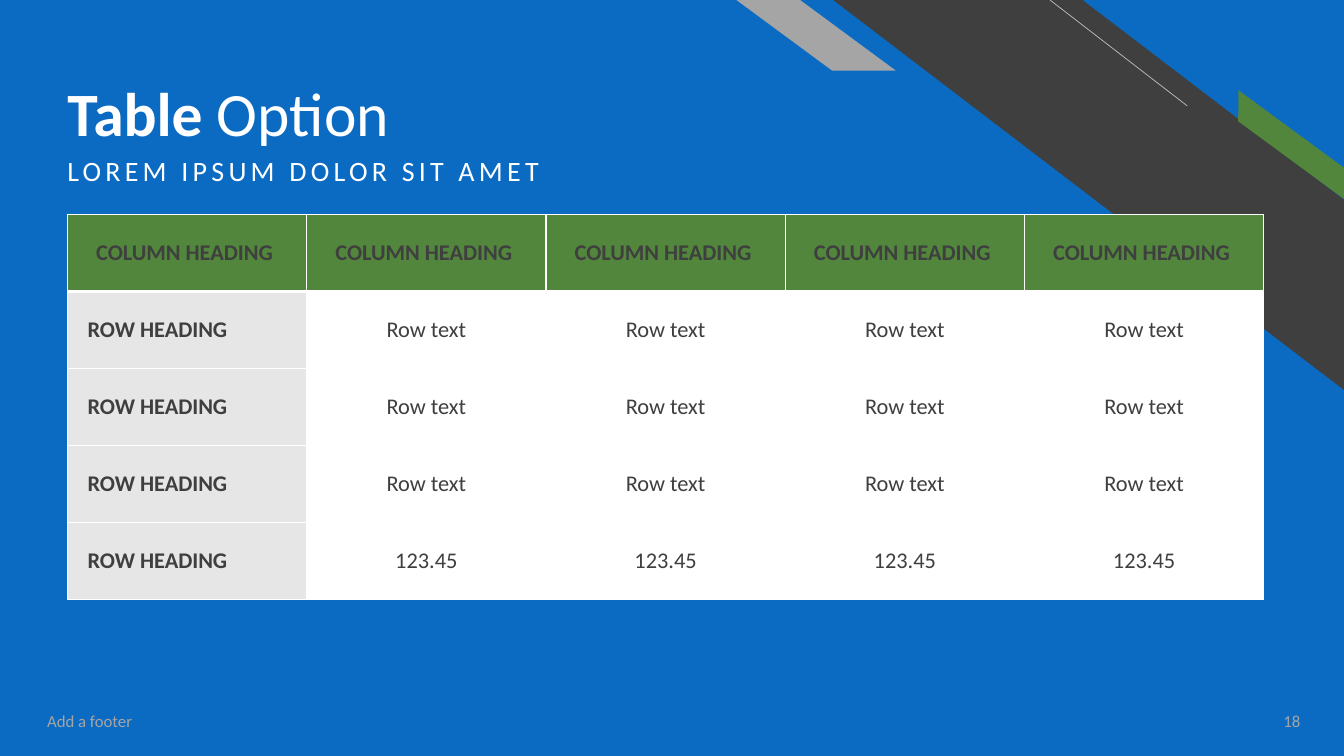
from lxml import etree
from pptx import Presentation
from pptx.dml.color import RGBColor
from pptx.enum.shapes import MSO_CONNECTOR, MSO_SHAPE
from pptx.enum.text import MSO_ANCHOR, MSO_AUTO_SIZE, PP_ALIGN
from pptx.oxml.ns import qn
from pptx.util import Pt

LEFT, CENTER, RIGHT = PP_ALIGN.LEFT, PP_ALIGN.CENTER, PP_ALIGN.RIGHT
TOP, MIDDLE, BOTTOM = MSO_ANCHOR.TOP, MSO_ANCHOR.MIDDLE, MSO_ANCHOR.BOTTOM
STRIPE, SLANT = MSO_SHAPE.DIAGONAL_STRIPE, MSO_SHAPE.PARALLELOGRAM
STRAIGHT = MSO_CONNECTOR.STRAIGHT
NO_AUTOSIZE = MSO_AUTO_SIZE.NONE

FONT = "Calibri"
COLORS = {
    "blue": "0B6BC3",
    "charcoal": "3E3F3E",
    "text": "3F3F3F",
    "green": "51863C",
    "gray": "A5A5A5",
    "hairline": "BFBFBF",
    "row_heading": "E6E6E6",
    "white": "FFFFFF",
}
COLUMN_COUNT = 5
COLUMN_WIDTH, ROW_HEIGHT = 170.92, 55.05
ROW_TEXTS = ["Row text", "Row text", "Row text", "123.45"]


def color(name):
    """Return the named colour."""
    return RGBColor.from_string(COLORS[name])


def set_values(target, **values):
    """Set each given format value on the target."""
    for name, value in values.items():
        setattr(target, name, value)


def add_span(para, text, size, color_name, bold=False):
    """Add a formatted run to a paragraph."""
    span = para.add_run()
    span.text = text
    set_values(span.font, name=FONT, size=Pt(size), bold=bold)
    span.font.color.rgb = color(color_name)
    return span


def add_text(page, place, text, size, color_name, align=LEFT, anchor=TOP):
    """Add a one-line text box and return its paragraph."""
    box = page.shapes.add_textbox(*map(Pt, place))
    set_values(box.text_frame, word_wrap=True, vertical_anchor=anchor)
    para = box.text_frame.paragraphs[0]
    para.alignment = align
    add_span(para, text, size, color_name)
    return para


def add_band(page, kind, place, adjustment, color_name, rotation=0):
    """Add a mirrored diagonal band."""
    band = page.shapes.add_shape(kind, *map(Pt, place))
    band.adjustments[0] = adjustment
    band.rotation = rotation
    band.shadow.inherit = False
    band.fill.solid()
    band.fill.fore_color.rgb = color(color_name)
    band.line.fill.background()
    band._element.spPr.find(qn("a:xfrm")).set("flipH", "1")


def add_hairline(page, start, end):
    """Add a thin line without a shadow."""
    line = page.shapes.add_connector(STRAIGHT, *map(Pt, start + end))
    line.line.width = Pt(0.5)
    line.line.color.rgb = color("hairline")
    etree.SubElement(line._element.spPr, qn("a:effectLst"))


def fill_title(page):
    """Place and write the title in its placeholder."""
    title = page.shapes.title
    set_values(title, left=Pt(41), top=Pt(16.5), width=Pt(656), height=Pt(90.7))
    set_values(title.text_frame, word_wrap=True, auto_size=NO_AUTOSIZE,
               vertical_anchor=BOTTOM, margin_left=Pt(7.2), margin_right=Pt(7.2),
               margin_top=Pt(3.6), margin_bottom=0)
    para = title.text_frame.paragraphs[0]
    set_values(para, alignment=LEFT, line_spacing=0.9)
    add_span(para, "Table ", 44, "white", bold=True)
    add_span(para, "Option", 44, "white")


def add_subtitle(page):
    """Add the letter-spaced line under the title."""
    para = add_text(page, (41, 108.7, 580, 48), "LOREM IPSUM DOLOR SIT AMET", 20, "white")
    set_values(para, line_spacing=0.9, space_before=Pt(10))
    para.runs[0].font._element.set("spc", "300")


def set_borders(cell, widths):
    """Draw white cell borders, with widths in points by side."""
    properties = cell._tc.get_or_add_tcPr()
    for index, (side, width) in enumerate(widths.items()):
        border = etree.Element(qn(f"a:ln{side}"), w=str(Pt(width)))
        fill = etree.SubElement(border, qn("a:solidFill"))
        etree.SubElement(fill, qn("a:srgbClr"), val=COLORS["white"])
        properties.insert(index, border)


def fill_cell(cell, text, fill_name, bold, align, indent, top, bottom):
    """Write and format one table cell."""
    cell.fill.solid()
    cell.fill.fore_color.rgb = color(fill_name)
    set_values(cell, vertical_anchor=MIDDLE, margin_left=Pt(indent), margin_right=Pt(7.2),
               margin_top=Pt(3.6), margin_bottom=Pt(3.6))
    para = cell.text_frame.paragraphs[0]
    para.alignment = align
    add_span(para, text, 16, "text", bold)
    set_borders(cell, {"L": 1, "R": 1, "T": top, "B": bottom})


def add_option_table(page):
    """Add the table with its column and row headings."""
    row_count = len(ROW_TEXTS) + 1
    frame = page.shapes.add_table(row_count, COLUMN_COUNT, Pt(48.2), Pt(153.2),
                                  Pt(COLUMN_WIDTH * COLUMN_COUNT), Pt(ROW_HEIGHT * row_count))
    table = frame.table
    set_values(table, first_col=True, horz_banding=False)
    for column in table.columns:
        column.width = Pt(COLUMN_WIDTH)
    for row in table.rows:
        row.height = Pt(ROW_HEIGHT)
    for column in range(COLUMN_COUNT):
        fill_cell(table.cell(0, column), "COLUMN HEADING ", "green", True, CENTER, 7.2, 1, 3)
    for row, text in enumerate(ROW_TEXTS, start=1):
        top = 3 if row == 1 else 1
        fill_cell(table.cell(row, 0), "ROW HEADING", "row_heading", True, LEFT, 14.4, top, 1)
        for column in range(1, COLUMN_COUNT):
            fill_cell(table.cell(row, column), text, "white", False, CENTER, 7.2, top, 1)


def main():
    """Build and save the slide."""
    deck = Presentation()
    set_values(deck, slide_width=Pt(960), slide_height=Pt(540))
    page = deck.slides.add_slide(deck.slide_layouts[5])
    page.background.fill.solid()
    page.background.fill.fore_color.rgb = color("blue")

    add_band(page, STRIPE, (595.2, 0, 364.8, 278.5), 0.512, "charcoal")
    add_hairline(page, (848, 75.6), (750, 0))
    add_band(page, SLANT, (869, 94.3, 106.6, 18), 0.72, "green", rotation=36.3)
    add_band(page, SLANT, (526, 0, 113.8, 50.4), 1.356, "gray")

    fill_title(page)
    add_subtitle(page)
    add_option_table(page)
    add_text(page, (26.6, 500.5, 324, 28.8), "Add a footer", 12, "gray", anchor=MIDDLE)
    add_text(page, (877.7, 500.5, 58.3, 28.8), "18", 12, "gray", RIGHT, MIDDLE)
    deck.save("out.pptx")


if __name__ == "__main__":
    main()
